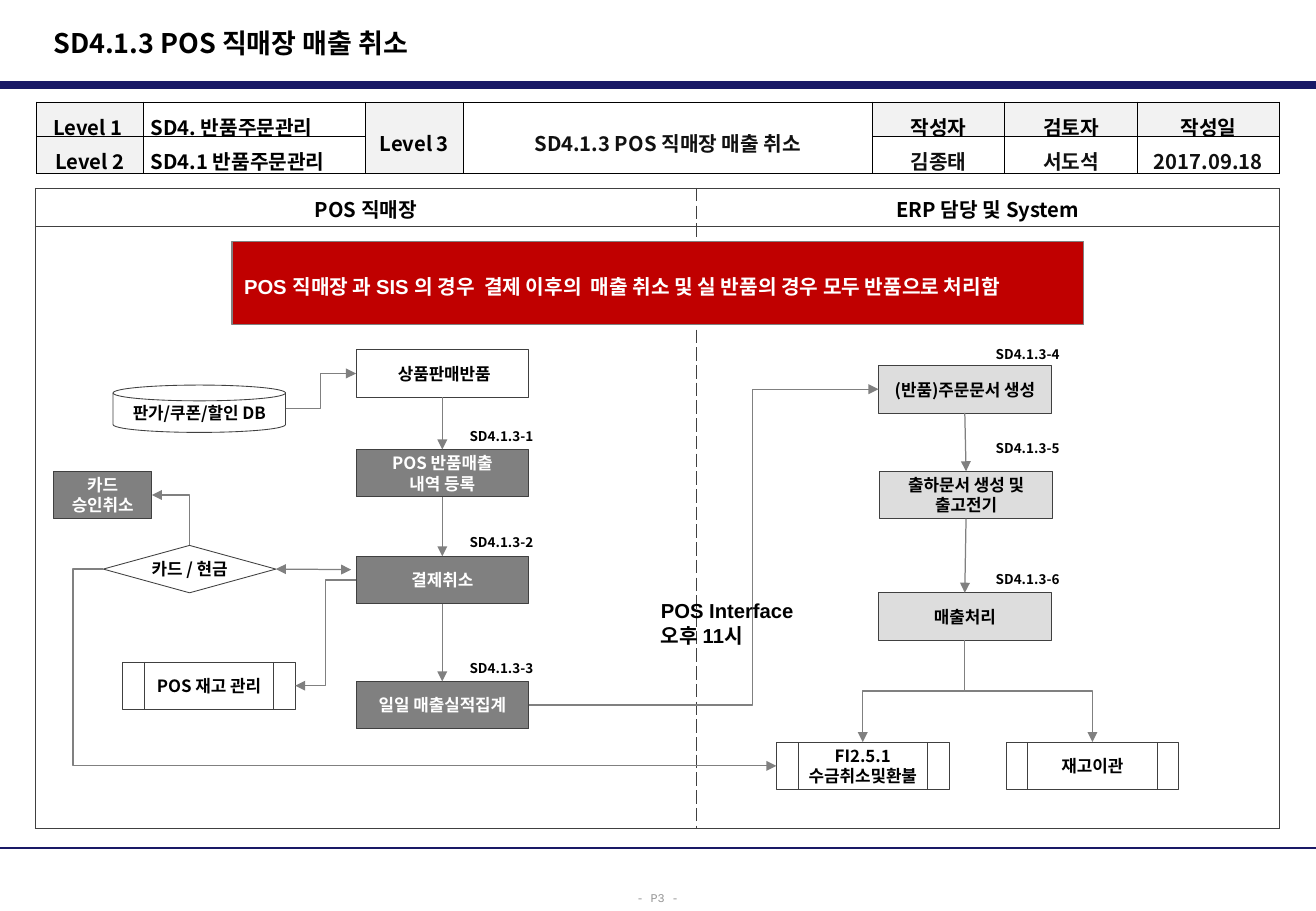
from dataclasses import dataclass
from typing import NamedTuple, Optional

from lxml import etree
from pptx import Presentation
from pptx.dml.color import RGBColor
from pptx.enum.shapes import MSO_CONNECTOR, MSO_SHAPE
from pptx.enum.text import MSO_ANCHOR, PP_ALIGN
from pptx.oxml.ns import qn
from pptx.util import Emu, Pt

PX = 9144  # EMU per px, 100 px to the inch
RECT = MSO_SHAPE.RECTANGLE
DISK = MSO_SHAPE.FLOWCHART_MAGNETIC_DISK
PROCESS = MSO_SHAPE.FLOWCHART_PREDEFINED_PROCESS
DIAMOND = MSO_SHAPE.DIAMOND
STRAIGHT, ELBOW = MSO_CONNECTOR.STRAIGHT, MSO_CONNECTOR.ELBOW
LEFT, CENTER, RIGHT = PP_ALIGN.LEFT, PP_ALIGN.CENTER, PP_ALIGN.RIGHT
TOP, MIDDLE = MSO_ANCHOR.TOP, MSO_ANCHOR.MIDDLE


@dataclass(frozen=True)
class Theme:
    korean: str = "Noto Sans CJK KR"
    latin: str = "Arial"
    mono: str = "Courier New"
    black: str = "000000"
    ink: str = "111111"
    white: str = "FFFFFF"
    outline: str = "404040"
    gray: str = "808080"
    light: str = "DDDDDD"
    header: str = "F2F2F2"
    navy: str = "191966"
    red: str = "C00000"
    muted: str = "969696"
    title: float = 16
    heading: float = 12
    body: float = 10
    label: float = 8
    footer: float = 7


THEME = Theme()


class Style(NamedTuple):
    size: float
    color: str = THEME.black
    font: str = THEME.korean
    bold: bool = True
    align: PP_ALIGN = LEFT
    spacing: Optional[float] = None


class Node(NamedTuple):
    key: str
    text: str
    x: int
    y: int
    fill: str = THEME.white
    kind: MSO_SHAPE = RECT
    width: int = 142
    insets: tuple = (4, 5, 4, 5)
    wrap: bool = True


class Link(NamedTuple):
    """A glued arrow; turn is the bend as a share of the run."""
    start: str
    start_site: int
    end: str
    end_site: int
    kind: MSO_CONNECTOR = STRAIGHT
    turn: Optional[float] = None
    downward: bool = False


class Label(NamedTuple):
    text: str
    x: int
    y: int


NODE_HEIGHT = 39
NODES = [
    Node("sale", " 상품판매반품", 293, 288),
    Node("register", "POS 반품매출\n내역 등록", 293, 370, THEME.gray),
    Node("cancel", "결제취소", 293, 458, THEME.gray),
    Node("prices", "판가/쿠폰/할인 DB", 93, 317, kind=DISK, insets=(10, 5, 10, 5), wrap=False),
    Node("daily", "일일 매출실적집계", 293, 561, THEME.gray),
    Node("order", "(반품)주문문서 생성", 723, 301, THEME.light),
    Node("delivery", "출하문서 생성 및\n출고전기", 724, 388, THEME.light),
    Node("billing", "매출처리", 723, 488, THEME.light),
    Node("stock", "POS 재고 관리", 101, 545, kind=PROCESS),
    Node("transfer", "재고이관", 828, 611, kind=PROCESS),
    Node("payment", "카드 / 현금", 85, 449, kind=DIAMOND, insets=(0, 0, 0, 0), wrap=False),
    Node("card", "카드\n승인취소", 44, 388, THEME.gray, width=81),
    Node("refund", "FI2.5.1\n수금취소및환불", 639, 611, kind=PROCESS),
]
LINKS = [
    Link("sale", 2, "register", 0),
    Link("register", 2, "cancel", 0),
    Link("cancel", 2, "daily", 0),
    Link("order", 2, "delivery", 0),
    Link("delivery", 2, "billing", 0),
    Link("prices", 4, "sale", 1, ELBOW, 0.5),
    Link("daily", 3, "order", 1, ELBOW, 0.64),
    Link("cancel", 1, "stock", 3, ELBOW, 0.5),
    Link("payment", 1, "refund", 1, ELBOW, -0.045),
    Link("billing", 2, "refund", 0, ELBOW, 0.5, True),
    Link("billing", 2, "transfer", 0, ELBOW, 0.5, True),
]
LABELS = [
    Label(f"SD4.1.3-{number}", x, y) for number, (x, y) in enumerate(
        [(380, 348), (380, 436), (380, 539), (813, 281), (813, 358), (813, 466)], 1)
]
LEVELS = [
    ["Level 1 ", "SD4. 반품주문관리", "Level 3", "SD4.1.3 POS 직매장 매출 취소", "작성자", "검토자", "작성일"],
    ["Level 2", "SD4.1 반품주문관리", "", "", "김종태", "서도석", "2017.09.18"],
]
SHADED = {(0, 0), (1, 0), (0, 2), (0, 4), (0, 5), (0, 6)}
INKED = {(0, 3), (1, 4), (1, 5), (1, 6)}


def px(*lengths: float) -> list[Emu]:
    return [Emu(round(length * PX)) for length in lengths]


def write(frame, text: str, style: Style) -> None:
    for index, line in enumerate(text.split("\n")):
        para = frame.paragraphs[0] if index == 0 else frame.add_paragraph()
        para.alignment = style.align
        if style.spacing:
            para.line_spacing = style.spacing
        span = para.add_run()
        span.text = line
        span.font.size, span.font.bold = Pt(style.size), style.bold
        span.font.color.rgb = RGBColor.from_string(style.color)
        span.font.name = style.font
        etree.SubElement(span.font._element, qn("a:ea"), typeface=THEME.korean)


def set_frame(frame, insets: tuple, anchor: MSO_ANCHOR, wrap: bool) -> None:
    frame.margin_left, frame.margin_top, frame.margin_right, frame.margin_bottom = px(*insets)
    frame.vertical_anchor, frame.word_wrap = anchor, wrap


def add_text(page, text: str, area: tuple, style: Style, insets: tuple = (10, 5, 10, 5),
             anchor: MSO_ANCHOR = TOP, wrap: bool = True) -> None:
    box = page.shapes.add_textbox(*px(*area))
    set_frame(box.text_frame, insets, anchor, wrap)
    write(box.text_frame, text, style)


def add_block(page, kind: MSO_SHAPE, area: tuple, fill: str, line: str, weight: float):
    block = page.shapes.add_shape(kind, *px(*area))
    block.shadow.inherit = False
    block.fill.solid()
    block.fill.fore_color.rgb = RGBColor.from_string(fill)
    block.line.color.rgb = RGBColor.from_string(line)
    block.line.width = Pt(weight)
    return block


def add_node(page, node: Node):
    block = add_block(page, node.kind, (node.x, node.y, node.width, NODE_HEIGHT),
                      node.fill, THEME.outline, 0.5)
    set_frame(block.text_frame, node.insets, MIDDLE, node.wrap)
    color = THEME.white if node.fill == THEME.gray else THEME.black
    write(block.text_frame, node.text, Style(THEME.body, color, align=CENTER))
    return block


def add_line(page, kind: MSO_CONNECTOR, ends: tuple, color: str, weight: float, heads: tuple = ()):
    line = page.shapes.add_connector(kind, *px(*ends))
    line.line.color.rgb = RGBColor.from_string(color)
    line.line.width = Pt(weight)
    for head in heads:
        etree.SubElement(line.line._get_or_add_ln(), qn(f"a:{head}"), type="triangle")
    etree.SubElement(line.element.spPr, qn("a:effectLst"))
    return line


def stand_upright(line) -> None:
    """Turn an elbow that runs down so that it leaves vertically."""
    rightward = line.end_x > line.begin_x
    left, top, width, height = line.left, line.top, line.width, line.height
    line.left, line.top = left + (width - height) // 2, top + (height - width) // 2
    line.width, line.height = height, width
    frame = line.element.spPr.find(qn("a:xfrm"))
    frame.attrib.pop("flipH", None)
    frame.set("rot", "5400000")
    frame.set("flipV", "1" if rightward else "0")


def add_link(page, link: Link, blocks: dict) -> None:
    line = add_line(page, link.kind, (0, 0, 0, 0), THEME.gray, 0.75, ("tailEnd",))
    start, end = blocks[link.start], blocks[link.end]
    if link.start_site < 4:
        line.begin_connect(start, link.start_site)
    else:  # right side of a disk
        line.begin_x, line.begin_y = start.left + start.width, start.top + start.height // 2
    line.end_connect(end, link.end_site)
    if link.turn is not None:
        guides = line.element.spPr.find(qn("a:prstGeom")).find(qn("a:avLst"))
        etree.SubElement(guides, qn("a:gd"), name="adj1", fmla=f"val {round(link.turn * 100000)}")
    if link.downward:
        stand_upright(line)


def set_borders(cell, color: str, dashed: str = "") -> None:
    properties = cell._tc.get_or_add_tcPr()
    for index, side in enumerate("LRTB"):
        border = etree.Element(qn(f"a:ln{side}"), w=str(Pt(0.5)))
        fill = etree.SubElement(border, qn("a:solidFill"))
        etree.SubElement(fill, qn("a:srgbClr"), val=color)
        etree.SubElement(border, qn("a:prstDash"), val="dash" if side == dashed else "solid")
        properties.insert(index, border)


def add_grid(page, corner: tuple, columns: list[int], rows: list[int]):
    grid = page.shapes.add_table(len(rows), len(columns),
                                 *px(*corner, sum(columns), sum(rows))).table
    grid.first_row = grid.horz_banding = False
    for column, width in zip(grid.columns, px(*columns)):
        column.width = width
    for row, height in zip(grid.rows, px(*rows)):
        row.height = height
    for cell in grid.iter_cells():
        cell.fill.background()
    return grid


def add_lanes(page) -> None:
    lanes = add_grid(page, (29, 155), [544, 480], [31, 496])
    for column, (name, divider) in enumerate([("POS 직매장", "R"), ("ERP 담당 및 System", "L")]):
        write(lanes.cell(0, column).text_frame, name, Style(THEME.heading, align=CENTER))
        for row in range(2):
            set_borders(lanes.cell(row, column), THEME.outline, divider)


def add_levels(page) -> None:
    levels = add_grid(page, (30, 84), [88, 183, 80, 337, 109, 109, 117], [28, 31])
    for row, texts in enumerate(LEVELS):
        for column, text in enumerate(texts):
            cell = levels.cell(row, column)
            cell.margin_left, cell.margin_top, cell.margin_right, cell.margin_bottom = px(6, 1, 6, 1)
            cell.vertical_anchor = MIDDLE
            if (row, column) in SHADED:
                cell.fill.solid()
                cell.fill.fore_color.rgb = RGBColor.from_string(THEME.header)
            set_borders(cell, THEME.black)
            if text:
                color = THEME.ink if (row, column) in INKED else THEME.black
                align = LEFT if column == 1 else CENTER
                write(cell.text_frame, text, Style(THEME.heading, color, align=align, spacing=1.3))
    for column in (2, 3):
        levels.cell(0, column).merge(levels.cell(1, column))


def main() -> None:
    deck = Presentation()
    deck.slide_width, deck.slide_height = px(1083, 750)
    page = deck.slides.add_slide(deck.slide_layouts[6])
    for y, weight in ((70, 4.5), (698, 1.5)):
        add_line(page, STRAIGHT, (0, y, 1083, y), THEME.navy, weight)
    add_text(page, "- P3 -", (514, 725, 56, 25),
             Style(THEME.footer, THEME.muted, THEME.mono, False, spacing=1.3), wrap=False)
    add_lanes(page)
    add_text(page, "SD4.1.3 POS 직매장 매출 취소", (34, 16, 711, 38), Style(THEME.title), anchor=MIDDLE)
    add_levels(page)
    blocks = {node.key: add_node(page, node) for node in NODES}
    for link in LINKS:
        add_link(page, link, blocks)
    card_link = add_line(page, ELBOW, (125, 407, 156, 449), THEME.gray, 0.75, ("headEnd",))
    card_link.begin_connect(blocks["card"], 3)
    card_link.end_connect(blocks["payment"], 0)
    card_link.element.spPr.find(qn("a:prstGeom")).set("prst", "bentConnector2")
    pay_link = add_line(page, STRAIGHT, (227, 469, 289, 469), THEME.gray, 0.75, ("headEnd", "tailEnd"))
    pay_link.begin_connect(blocks["payment"], 3)
    for label in LABELS:
        add_text(page, label.text, (label.x, label.y, 59, 21),
                 Style(THEME.label, align=RIGHT), (0, 4, 0, 4))
    add_text(page, "POS Interface\n오후 11시", (534, 488, 157, 50), Style(THEME.heading, font=THEME.latin))
    banner = add_block(page, RECT, (191, 199, 701, 68), THEME.red, THEME.gray, 0.75)
    set_frame(banner.text_frame, (10, 5, 10, 5), MIDDLE, True)
    write(banner.text_frame,
          "POS 직매장 과 SIS 의 경우  결제 이후의  매출 취소 및 실 반품의 경우 모두 반품으로 처리함",
          Style(THEME.heading, THEME.white, THEME.latin, spacing=1.3))
    deck.save("out.pptx")


if __name__ == "__main__":
    main()
